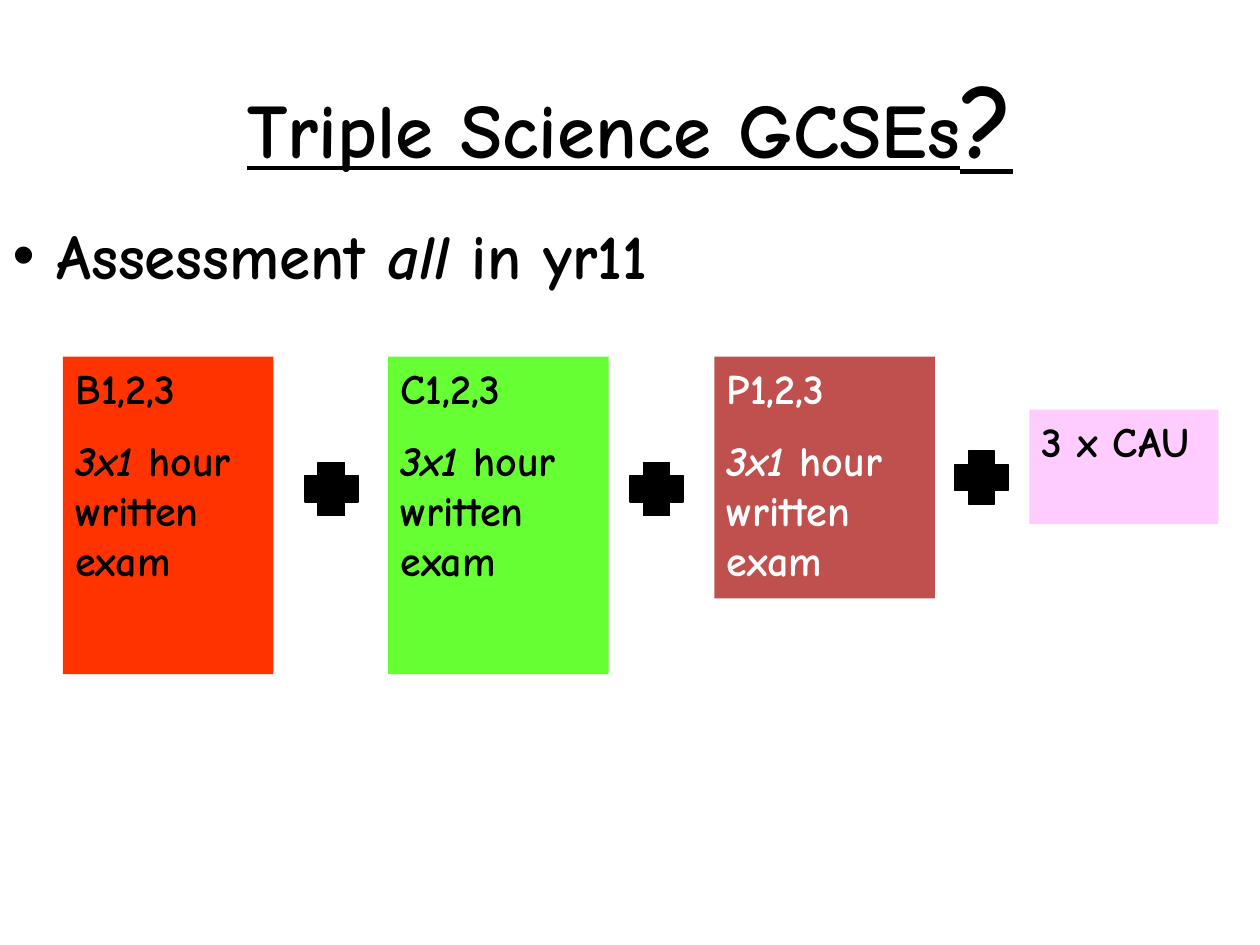
from pptx import Presentation
from pptx.dml.color import RGBColor
from pptx.enum.shapes import MSO_SHAPE
from pptx.enum.text import MSO_ANCHOR, MSO_AUTO_SIZE, PP_ALIGN
from pptx.util import Inches, Pt

RECT, PLUS = MSO_SHAPE.RECTANGLE, MSO_SHAPE.CROSS
TOP, MIDDLE = MSO_ANCHOR.TOP, MSO_ANCHOR.MIDDLE
LEFT, CENTER = PP_ALIGN.LEFT, PP_ALIGN.CENTER
NO_FIT = MSO_AUTO_SIZE.NONE

FONT = "Comic Neue"
COLORS = {"black": "000000", "white": "FFFFFF", "biology": "FF3300",
          "chemistry": "66FF33", "physics": "C0504D", "cau": "FFCCFF"}

# Content: runs are (text, italic) pairs
TITLE = [("Triple Science GCSEs", 44), ("?", 60)]
ASSESSMENT = [("Assessment ", False), ("all", True), (" in yr11", False)]
EXAM = [("3x1", True), (" hour written exam", False)]
# fill, text colour, (left, top, width, height), paragraphs
CARDS = [
    ("biology", "black", (0.5, 2.83, 1.67, 2.52), [[("B1,2,3", False)], EXAM]),
    ("chemistry", "black", (3.08, 2.83, 1.75, 2.52), [[("C1,2,3", False)], EXAM]),
    ("physics", "white", (5.67, 2.83, 1.75, 1.92), [[("P1,2,3", False)], EXAM]),
    ("cau", "black", (8.17, 3.25, 1.5, 0.91), [[("3 x CAU", False)]]),
]
PLUS_SIZE = 0.42
PLUS_POSITIONS = [(2.42, 3.67), (5, 3.67), (7.58, 3.58)]


def rgb(name):
    return RGBColor.from_string(COLORS[name])


def place(shape, left, top, width, height):
    shape.left, shape.top = Inches(left), Inches(top)
    shape.width, shape.height = Inches(width), Inches(height)


def set_font(paragraph, color, size=None):
    font = paragraph.font
    font.name, font.bold = FONT, True
    font.color.rgb = rgb(color)
    if size:
        font.size = Pt(size)


def add_runs(paragraph, runs):
    for text, italic in runs:
        run = paragraph.add_run()
        run.text = text
        if italic:
            run.font.italic = True


def add_filled(slide, preset, box, color):
    shape = slide.shapes.add_shape(preset, *map(Inches, box))
    shape.shadow.inherit = False
    shape.fill.solid()
    shape.fill.fore_color.rgb = rgb(color)
    return shape


def add_card(slide, fill, color, box, paragraphs):
    card = add_filled(slide, RECT, box, fill)
    card.line.fill.background()
    frame = card.text_frame
    frame.word_wrap, frame.vertical_anchor = True, TOP
    for i, runs in enumerate(paragraphs):
        paragraph = frame.add_paragraph() if i else frame.paragraphs[0]
        paragraph.alignment = LEFT
        if i:
            paragraph.space_before = Pt(12)
        add_runs(paragraph, runs)
        set_font(paragraph, color, 24)


def main():
    prs = Presentation()
    prs.slide_width, prs.slide_height = Inches(10), Inches(7.5)
    slide = prs.slides.add_slide(prs.slide_layouts[1])

    # Title
    title = slide.shapes.title
    place(title, 1.44, 0.37, 7.12, 1.11)
    title.text_frame.auto_size = NO_FIT
    title.text_frame.vertical_anchor = MIDDLE
    heading = title.text_frame.paragraphs[0]
    heading.alignment = CENTER
    for text, size in TITLE:
        run = heading.add_run()
        run.text, run.font.size = text, Pt(size)
    set_font(heading, "black")
    heading.font.underline = True

    # Assessment bullet
    body = slide.placeholders[1]
    place(body, 0, 1.67, 6.19, 0.71)
    body.text_frame.auto_size = NO_FIT
    bullet = body.text_frame.paragraphs[0]
    properties = bullet._p.get_or_add_pPr()
    properties.set("marL", str(Inches(0.35)))
    properties.set("indent", str(-Inches(0.35)))
    bullet.space_before = Pt(0)
    add_runs(bullet, ASSESSMENT)
    set_font(bullet, "black", 36)

    # Exam cards and the plus signs between them
    for card in CARDS:
        add_card(slide, *card)
    for left, top in PLUS_POSITIONS:
        plus = add_filled(slide, PLUS, (left, top, PLUS_SIZE, PLUS_SIZE), "black")
        plus.adjustments[0] = 0.25
        plus.line.color.rgb = rgb("black")
        plus.line.width = Pt(0.75)

    prs.save("out.pptx")


if __name__ == "__main__":
    main()
